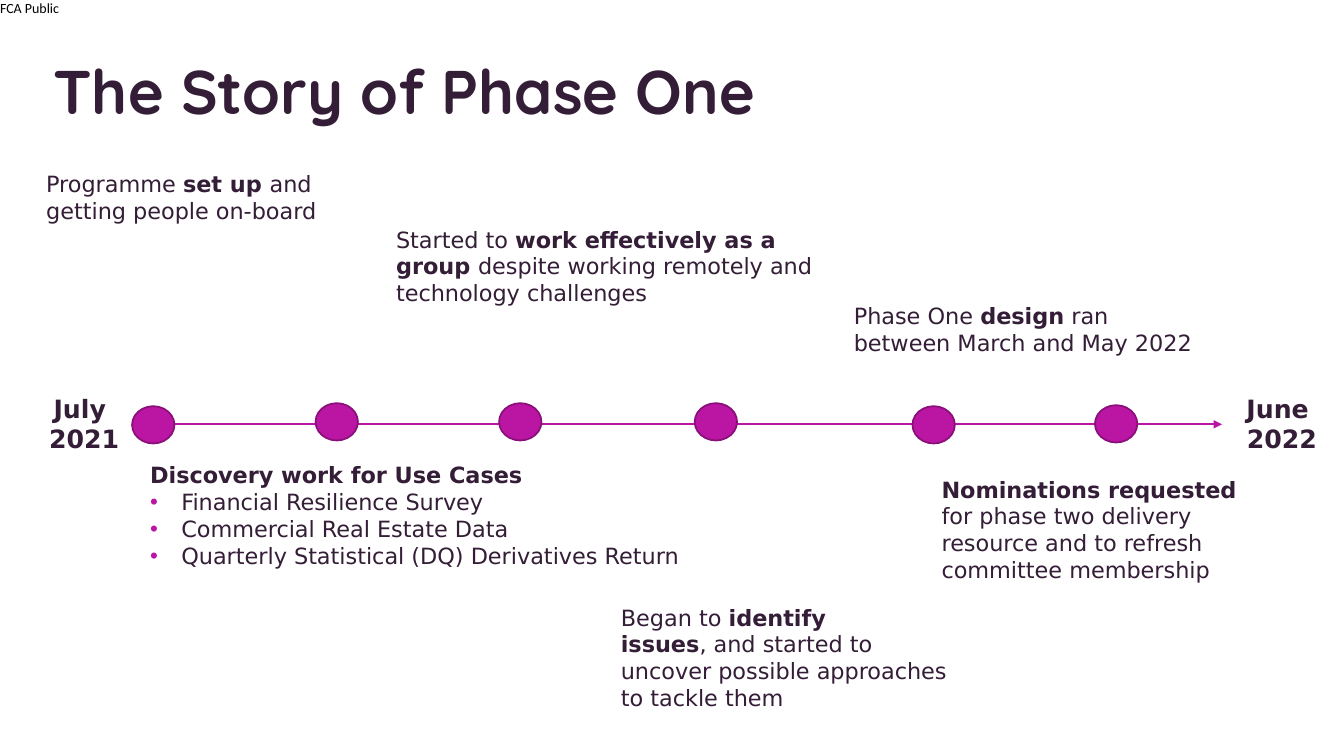
from dataclasses import dataclass

from lxml import etree
from pptx import Presentation
from pptx import util as u
from pptx.dml.color import RGBColor
from pptx.enum import shapes, text
from pptx.oxml import ns


@dataclass(frozen=True)
class Theme:
    ink: str = "341D36"
    accent: str = "BB16A3"
    outline: str = "8A1079"
    black: str = "000000"
    title_font: str = "Quicksand"
    body_font: str = "DejaVu Sans"
    label_font: str = "Calibri"
    title_size: int = 44
    date_size: int = 18
    body_size: int = 16
    label_size: int = 10
    line_width: float = 1.25


class TimelineSlide:
    def __init__(self, deck, theme):
        self.theme = theme
        self.page = deck.slides.add_slide(deck.slide_layouts[5])

    def add_runs(self, para, runs, size, font=None, color=None):
        for words, bold in runs:
            for index, line in enumerate(words.split("\n")):
                if index:
                    para.add_line_break()
                if not line:
                    continue
                span = para.add_run()
                span.text = line
                span.font.size = u.Pt(size)
                span.font.bold = bold
                span.font.name = font or self.theme.body_font
                span.font.color.rgb = RGBColor.from_string(color or self.theme.ink)

    def title(self, words, left, top, width, height):
        box = self.page.shapes.title
        box.left, box.top = u.Inches(left), u.Inches(top)
        box.width, box.height = u.Inches(width), u.Inches(height)
        frame = box.text_frame
        frame.vertical_anchor = text.MSO_ANCHOR.MIDDLE
        frame.auto_size = text.MSO_AUTO_SIZE.NONE
        para = frame.paragraphs[0]
        para.alignment = text.PP_ALIGN.LEFT
        self.add_runs(para, [(words, True)], self.theme.title_size, self.theme.title_font)

    def frame(self, left, top, width, height, wrap=True):
        box = self.page.shapes.add_textbox(
            u.Inches(left), u.Inches(top), u.Inches(width), u.Inches(height))
        box.text_frame.word_wrap = wrap
        if not wrap:
            box.text_frame.auto_size = text.MSO_AUTO_SIZE.SHAPE_TO_FIT_TEXT
        return box.text_frame

    def label(self, words, left, top, width, height):
        frame = self.frame(left, top, width, height, wrap=False)
        frame.margin_left = frame.margin_right = 0
        frame.margin_top = frame.margin_bottom = 0
        self.add_runs(frame.paragraphs[0], [(words, False)], self.theme.label_size,
                      self.theme.label_font, self.theme.black)

    def date(self, words, left, top, width, height):
        para = self.frame(left, top, width, height).paragraphs[0]
        para.alignment = text.PP_ALIGN.CENTER
        self.add_runs(para, [(words, True)], self.theme.date_size)

    def note(self, runs, left, top, width, height, wrap=False):
        frame = self.frame(left, top, width, height, wrap)
        self.add_runs(frame.paragraphs[0], runs, self.theme.body_size)
        return frame

    def bullet(self, frame, words):
        para = frame.add_paragraph()
        props = para._p.get_or_add_pPr()
        indent = u.Inches(0.31)
        props.set("marL", str(indent))
        props.set("indent", str(-indent))
        color = etree.SubElement(props, ns.qn("a:buClr"))
        etree.SubElement(color, ns.qn("a:srgbClr"), val=self.theme.accent)
        etree.SubElement(props, ns.qn("a:buFont"), typeface="Arial")
        etree.SubElement(props, ns.qn("a:buChar"), char="•")
        self.add_runs(para, [(words, False)], self.theme.body_size)

    def arrow(self, start, end, y):
        line = self.page.shapes.add_connector(
            shapes.MSO_CONNECTOR.STRAIGHT,
            u.Inches(start), u.Inches(y), u.Inches(end), u.Inches(y))
        line.line.color.rgb = RGBColor.from_string(self.theme.accent)
        line.line.width = u.Pt(self.theme.line_width)
        props = line._element.spPr
        etree.SubElement(props.find(ns.qn("a:ln")), ns.qn("a:tailEnd"), type="triangle")
        etree.SubElement(props, ns.qn("a:effectLst"))

    def milestone(self, left, top):
        dot = self.page.shapes.add_shape(
            shapes.MSO_SHAPE.OVAL,
            u.Inches(left), u.Inches(top), u.Inches(0.42), u.Inches(0.37))
        dot.shadow.inherit = False
        dot.fill.solid()
        dot.fill.fore_color.rgb = RGBColor.from_string(self.theme.accent)
        dot.line.color.rgb = RGBColor.from_string(self.theme.outline)
        dot.line.width = u.Pt(self.theme.line_width)


MILESTONES = [(1.31, 4.03), (3.13, 4), (4.95, 4), (6.89, 4), (9.05, 4.03), (10.86, 4.02)]

USE_CASES = [
    "Financial Resilience Survey",
    "Commercial Real Estate Data",
    "Quarterly Statistical (DQ) Derivatives Return",
]

EVENTS = [
    ([("Started to ", False), ("work effectively as a \ngroup ", True),
      ("despite working remotely and \ntechnology challenges", False)],
     (3.83, 2.19, 4.46, 0.91)),
    ([("Phase One ", False), ("design", True),
      (" ran \nbetween March and May 2022", False)],
     (8.37, 2.95, 3.59, 0.64)),
    ([("Nominations requested \n", True),
      ("for phase two delivery \nresource and to refresh \ncommittee membership", False)],
     (9.24, 4.67, 3.22, 1.18)),
    ([("Began to ", False), ("identify \nissues", True),
      (", and started to \nuncover possible approaches \nto tackle them", False)],
     (6.06, 5.94, 3.54, 1.18)),
]


def main():
    deck = Presentation()
    deck.slide_width, deck.slide_height = u.Inches(13.33), u.Inches(7.5)
    slide = TimelineSlide(deck, Theme())

    slide.label("FCA Public", 0, 0, 0.62, 0.17)
    slide.title("The Story of Phase One", 0.43, 0.31, 11.68, 1.16)
    slide.arrow(1.31, 12.12, 4.21)
    slide.date("July \n2021", 0.36, 3.85, 0.95, 0.73)
    slide.date("June \n2022", 12.12, 3.85, 1.19, 0.71)

    discovery = slide.note([("Discovery work for Use Cases", True)],
                           1.39, 4.53, 5.69, 1.72, wrap=True)
    for use_case in USE_CASES:
        slide.bullet(discovery, use_case)

    for left, top in MILESTONES:
        slide.milestone(left, top)

    slide.note([("Programme ", False), ("set up ", True),
                ("and getting people on-board", False)],
               0.36, 1.64, 3.3, 0.82, wrap=True)
    for runs, place in EVENTS:
        slide.note(runs, *place)

    deck.save("out.pptx")


if __name__ == "__main__":
    main()
